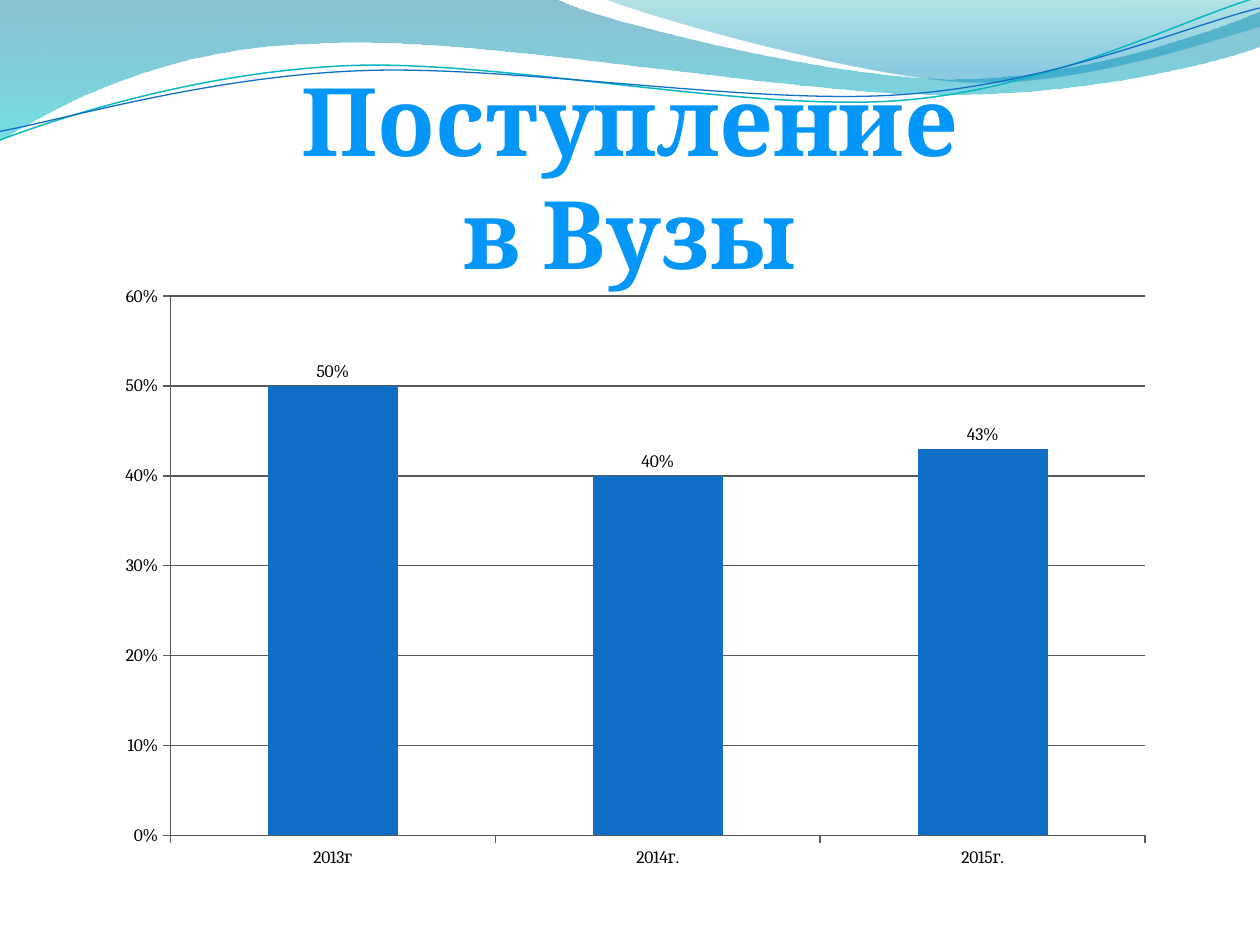
from lxml import etree
from pptx import Presentation
from pptx.chart import data as cd
from pptx.dml import color as dc
from pptx.enum import chart as ch, text as tx
from pptx.oxml import ns
from pptx.util import Pt

FONT = "Cambria"
BLUE = "0F6FC6"
GREY = "595959"


def rgb(code):
    """Turn a hex string into a colour."""
    return dc.RGBColor.from_string(code)


def trace(slide, start, parts, close):
    """Draw an outline of straight parts (one pair) and cubic curves (three pairs)."""
    fine = 20
    pts = [(x * fine, y * fine) for part in parts for x, y in part]
    pen = slide.shapes.build_freeform(*(n * fine for n in start), scale=Pt(1) / fine)
    pen.add_line_segments(pts, close=close)
    shape = pen.convert_to_shape()
    shape.shadow.inherit = False
    steps = iter(list(shape._element.iter(ns.qn("a:lnTo"))))
    for part in parts:
        group = [next(steps) for _ in part]
        if len(group) == 3:
            curve = etree.Element(ns.qn("a:cubicBezTo"))
            group[0].addprevious(curve)
            for step in group:
                curve.append(step[0])
                step.getparent().remove(step)
    return shape


def add_wave(slide, start, parts, stops):
    """Add a filled wave fading downwards through (place, colour, opacity)."""
    shape = trace(slide, start, parts, True)
    shape.line.fill.background()
    shape.fill.gradient()
    shape.fill.gradient_angle = 270
    for stop, (place, code, _) in zip(shape.fill.gradient_stops, stops):
        stop.position = place
        stop.color.rgb = rgb(code)
    marks = shape._element.spPr.iter(ns.qn("a:srgbClr"))
    for mark, (_, _, part) in zip(marks, stops):
        etree.SubElement(mark, ns.qn("a:alpha"), val=str(part * 1000))


def add_curve(slide, start, parts, code, width):
    """Add an open curved line."""
    shape = trace(slide, start, parts, False)
    shape.fill.background()
    shape.line.color.rgb = rgb(code)
    shape.line.width = Pt(width)


def add_chart(slide, box, names, vals):
    """Add the column chart of shares by year."""
    data = cd.CategoryChartData(number_format="0%")
    data.categories = names
    data.add_series("Series 1", vals)
    kind = ch.XL_CHART_TYPE.COLUMN_CLUSTERED
    chart = slide.shapes.add_chart(kind, *map(Pt, box), data).chart
    chart.has_legend = chart.has_title = False
    chart.font.name, chart.font.size = FONT, Pt(10)
    chart.font.color.rgb = rgb("000000")
    plot = chart.plots[0]
    plot.gap_width = 150
    plot.vary_by_categories = False
    tags = plot.series[0].data_labels
    tags.show_value = True
    tags.number_format, tags.number_format_is_linked = "0%", False
    tags.position = ch.XL_LABEL_POSITION.OUTSIDE_END
    fill = plot.series[0].format.fill
    fill.solid()
    fill.fore_color.rgb = rgb(BLUE)
    axis = chart.value_axis
    axis.tick_labels.number_format = "0%"
    axis.tick_labels.number_format_is_linked = False
    axis.has_major_gridlines = True
    axis.major_gridlines.format.line.color.rgb = rgb(GREY)
    for side in (axis, chart.category_axis):
        side.major_tick_mark = ch.XL_TICK_MARK.OUTSIDE
        side.format.line.color.rgb = rgb(GREY)


def add_title(slide, box, words):
    """Add the centred heading."""
    frame = slide.shapes.add_textbox(*map(Pt, box)).text_frame
    frame.word_wrap = True
    frame.auto_size = tx.MSO_AUTO_SIZE.SHAPE_TO_FIT_TEXT
    para = frame.paragraphs[0]
    para.text = words
    para.alignment = tx.PP_ALIGN.CENTER
    font = para.font
    font.name, font.size, font.bold = FONT, Pt(54), True
    font.color.rgb = rgb("0497F9")


def main():
    """Build and save the slide."""
    deck = Presentation()
    deck.slide_width, deck.slide_height = Pt(720), Pt(540)
    slide = deck.slides.add_slide(deck.slide_layouts[6])
    add_wave(slide, (0, 0), [
        [(317, -1)],
        [(343, 12), (478, 45), (546, 45)],
        [(614, 45), (690, 19), (720, 6.5)],
        [(721, 26)],
        [(708, 32), (626, 55), (537, 54)],
        [(448, 54), (275, 20), (185, 24.5)],
        [(93, 26), (33, 60), (-1, 81)],
    ], [(0, "0074A1", 45), (1, "00C6CF", 55)])
    add_wave(slide, (345, -1), [
        [(366.5, 8), (491, 44.5), (553.5, 47)],
        [(616.5, 49.5), (692, 23), (720, 15)],
        [(720, 0)],
    ], [(0, "00A1A9", 30), (0.8, "008BBF", 45)])
    add_curve(slide, (0, 80), [
        [(34.5, 67), (114, 41), (199.5, 37.5)],
        [(284.5, 34), (427, 64), (513.5, 57.5)],
        [(600, 51), (675.5, 11), (718.5, -1.5)],
    ], "0AB8BF", 0.85)
    add_curve(slide, (0, 75), [
        [(34, 69), (118, 44), (204, 40.5)],
        [(290, 36.5), (430, 60.5), (516, 54)],
        [(602, 48), (677.5, 15), (720, 4.5)],
    ], BLUE, 0.75)
    add_chart(slide, (59.5, 156.7, 607, 346),
              ["2013г", "2014г.", "2015г."], [0.5, 0.4, 0.43])
    add_title(slide, (161.3, 31.7, 397.4, 138.2), "Поступление в Вузы")
    deck.save("out.pptx")


if __name__ == "__main__":
    main()
